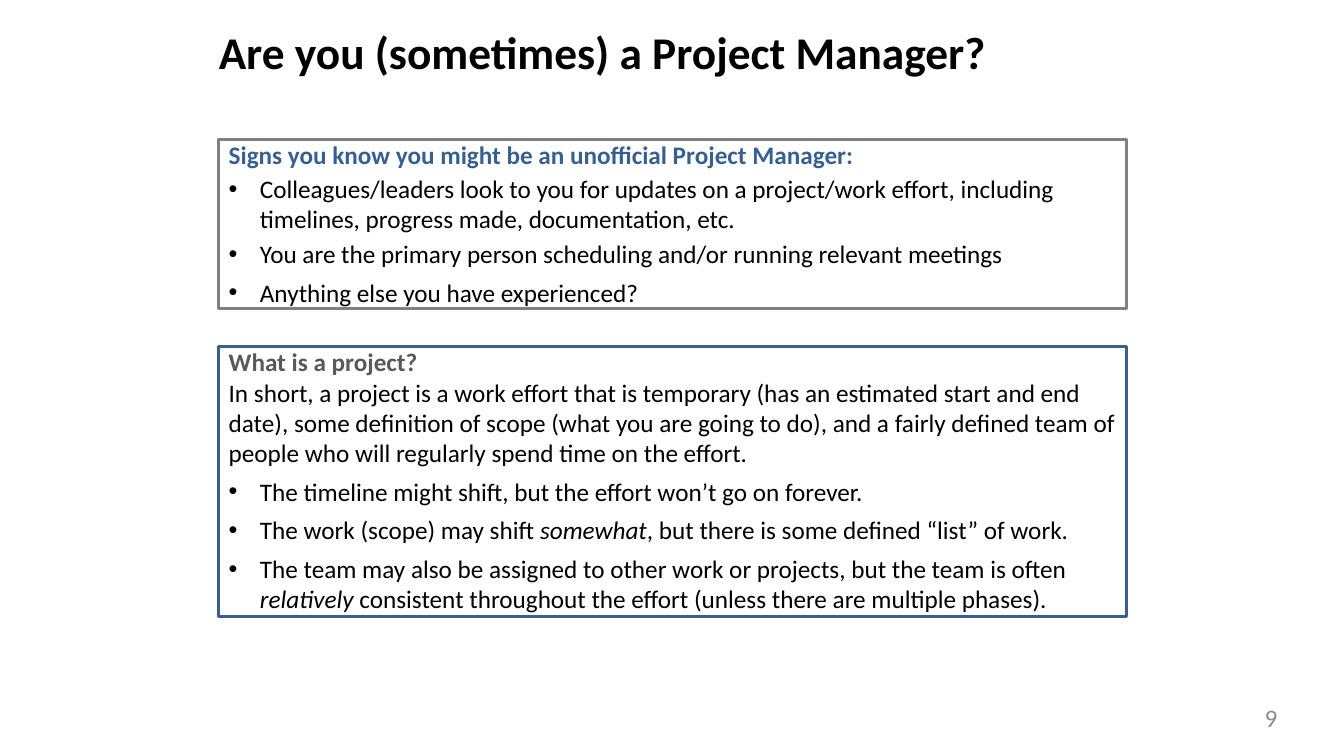
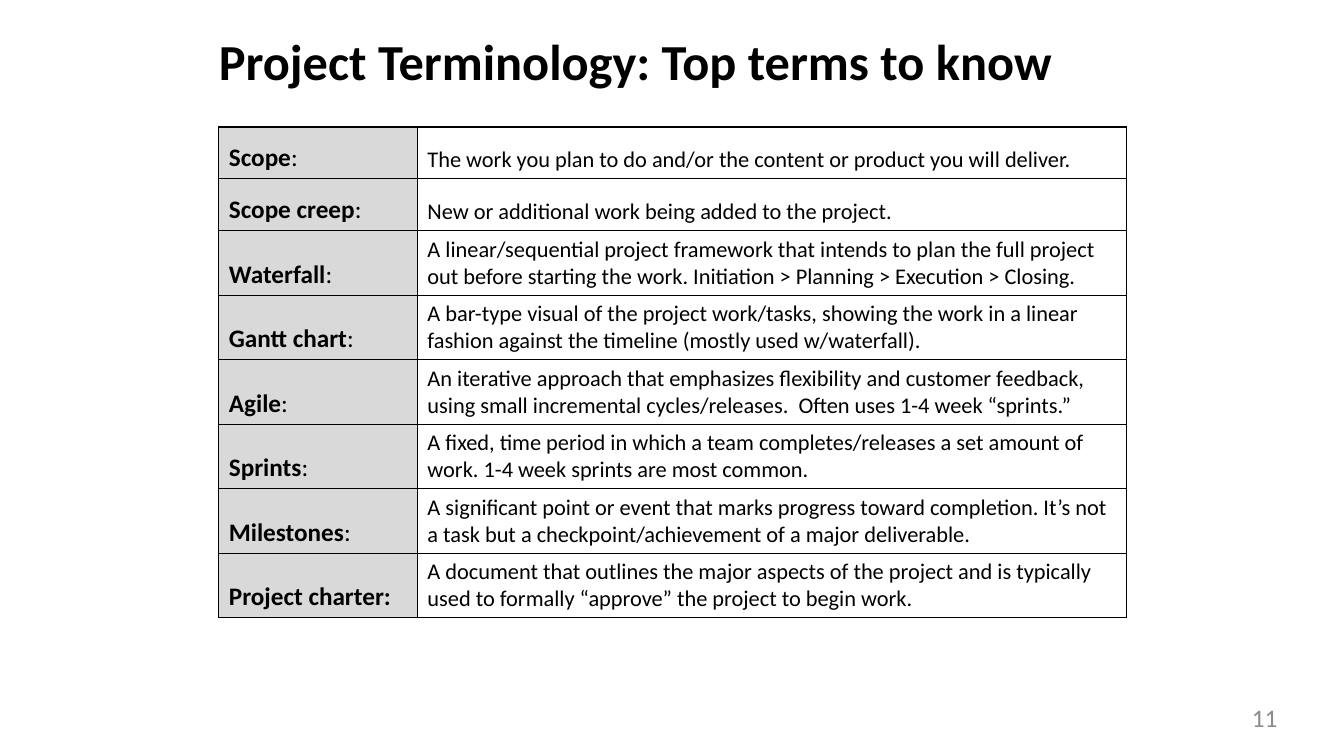
from dataclasses import dataclass

from lxml import etree
from pptx import Presentation
from pptx.dml.color import RGBColor
from pptx.enum import shapes, text
from pptx.oxml import ns
from pptx.util import Inches, Pt

BLACK = RGBColor(0x00, 0x00, 0x00)
BLUE = RGBColor(0x37, 0x60, 0x92)
GRAY = RGBColor(0x80, 0x80, 0x80)
DARK = RGBColor(0x59, 0x59, 0x59)
PALE = RGBColor(0x8C, 0x8C, 0x8C)
SHADE = RGBColor(0xD9, 0xD9, 0xD9)
FONT = "Calibri"
LEFT = 2.17
WIDTH = 9
INDENT = 0.31


@dataclass
class Run:
    text: str
    bold: bool = False
    italic: bool = False


@dataclass
class Para:
    runs: list[Run]
    color: RGBColor = BLACK
    bullet: bool = False
    after: float = 0


@dataclass
class Panel:
    top: float
    height: float
    line: RGBColor
    paras: list[Para]


@dataclass
class Term:
    name: str
    tail: str
    detail: str
    height: float = 0.64


def item(*runs: Run, after: float = 6) -> Para:
    return Para(list(runs), bullet=True, after=after)


PANELS = [
    Panel(1.38, 1.68, GRAY, [
        Para([Run("Signs you know you might be an unofficial Project Manager:", True)], BLUE, after=3),
        item(Run("Colleagues/leaders look to you for updates on a project/work effort, including "
                 "timelines, progress made, documentation, etc."), after=3),
        item(Run("You are the primary person scheduling and/or running relevant meetings")),
        item(Run("Anything else you have experienced?")),
    ]),
    Panel(3.44, 2.68, BLUE, [
        Para([Run("What is a project?", True)], DARK),
        Para([Run("In short, a project is a work effort that is temporary (has an estimated start and "
                  "end date), some definition of scope (what you are going to do), and a fairly "
                  "defined team of people who will regularly spend time on the effort.")], after=6),
        item(Run("The timeline might shift, but the effort won’t go on forever.")),
        item(Run("The work (scope) may shift "), Run("somewhat", italic=True),
             Run(", but there is some defined “list” of work.")),
        item(Run("The team may also be assigned to other work or projects, but the team is often "),
             Run("relatively", italic=True),
             Run(" consistent throughout the effort (unless there are multiple phases).")),
    ]),
]

TERMS = [
    Term("Scope", ":", "The work you plan to do and/or the content or product you will deliver.", 0.51),
    Term("Scope creep", ":", "New or additional work being added to the project.", 0.52),
    Term("Waterfall", ":", "A linear/sequential project framework that intends to plan the full project "
         "out before starting the work. Initiation > Planning > Execution > Closing."),
    Term("Gantt chart", ":", "A bar-type visual of the project work/tasks, showing the work in a linear "
         "fashion against the timeline (mostly used w/waterfall)."),
    Term("Agile", ":", "An iterative approach that emphasizes flexibility and customer feedback, "
         "using small incremental cycles/releases.  Often uses 1-4 week “sprints.”"),
    Term("Sprints", ":", "A fixed, time period in which a team completes/releases a set amount of "
         "work. 1-4 week sprints are most common."),
    Term("Milestones", ":", "A significant point or event that marks progress toward completion. It’s not "
         "a task but a checkpoint/achievement of a major deliverable."),
    Term("Project charter:", "", "A document that outlines the major aspects of the project and is typically "
         "used to formally “approve” the project to begin work."),
]


def write(frame, paras: list[Para], *, size: float = 18, align=text.PP_ALIGN.LEFT,
          space: float | None = None) -> None:
    frame.word_wrap = True
    for num, para in enumerate(paras):
        line = frame.paragraphs[0] if num == 0 else frame.add_paragraph()
        if para.bullet:
            props = line._p.get_or_add_pPr()
            props.set("marL", str(Inches(INDENT)))
            props.set("indent", str(-Inches(INDENT)))
            etree.SubElement(props, ns.qn("a:buFont"), typeface="Arial")
            etree.SubElement(props, ns.qn("a:buChar"), char="•")
        line.alignment = align
        line.space_after = Pt(para.after)
        if space:
            line.line_spacing = space
        for part in para.runs:
            run = line.add_run()
            run.text = part.text
            font = run.font
            font.name = FONT
            font.size = Pt(size)
            font.bold = part.bold
            font.italic = part.italic
            font.color.rgb = para.color


def pad(frame, side: float = 0) -> None:
    frame.margin_left = frame.margin_right = Inches(side)
    frame.margin_top = frame.margin_bottom = 0
    frame.vertical_anchor = text.MSO_ANCHOR.TOP


def label(slide, words: Para, left: float, top: float, width: float, height: float, **style) -> None:
    box = slide.shapes.add_textbox(Inches(left), Inches(top), Inches(width), Inches(height))
    pad(box.text_frame)
    write(box.text_frame, [words], **style)


def start(deck, title: str, page: int, size: float, space: float | None = None):
    slide = deck.slides.add_slide(deck.slide_layouts[6])
    label(slide, Para([Run(title, True)]), LEFT, 0.3, WIDTH, 0.51, size=size, space=space)
    label(slide, Para([Run(str(page))], PALE), 9.6, 6.97, 3.07, 0.3, align=text.PP_ALIGN.RIGHT)
    return slide


def draw(slide, panel: Panel) -> None:
    box = slide.shapes.add_shape(shapes.MSO_SHAPE.RECTANGLE, Inches(LEFT), Inches(panel.top),
                                 Inches(WIDTH), Inches(panel.height))
    box.shadow.inherit = False
    box.fill.background()
    box.line.color.rgb = panel.line
    box.line.width = Pt(2.25)
    pad(box.text_frame, 0.1)
    write(box.text_frame, panel.paras)
    box.text_frame.auto_size = text.MSO_AUTO_SIZE.SHAPE_TO_FIT_TEXT


def edge(cell) -> None:
    props = cell._tc.get_or_add_tcPr()
    for side in ("lnL", "lnR", "lnT", "lnB"):
        line = etree.SubElement(props, ns.qn(f"a:{side}"), w=str(Pt(1)))
        fill = etree.SubElement(line, ns.qn("a:solidFill"))
        etree.SubElement(fill, ns.qn("a:srgbClr"), val=str(BLACK))


def grid(slide, terms: list[Term]) -> None:
    total = sum(term.height for term in terms)
    table = slide.shapes.add_table(len(terms), 2, Inches(LEFT), Inches(1.26),
                                   Inches(WIDTH), Inches(total)).table
    table.first_row = table.horz_banding = False
    for col, width in zip(table.columns, (1.97, 7.03)):
        col.width = Inches(width)
    for row, term in zip(table.rows, terms):
        row.height = Inches(term.height)
        name, detail = row.cells
        for cell in (name, detail):
            edge(cell)
            cell.vertical_anchor = text.MSO_ANCHOR.BOTTOM
        name.fill.solid()
        name.fill.fore_color.rgb = SHADE
        detail.fill.background()
        runs = [Run(term.name, True)] + ([Run(term.tail)] if term.tail else [])
        write(name.text_frame, [Para(runs)])
        write(detail.text_frame, [Para([Run(term.detail)])], size=16)


def main() -> None:
    deck = Presentation()
    deck.slide_width = Inches(13.33)
    deck.slide_height = Inches(7.5)
    signs = start(deck, "Are you (sometimes) a Project Manager?", 9, 32.4, 0.9)
    for panel in PANELS:
        draw(signs, panel)
    terms = start(deck, "Project Terminology: Top terms to know", 11, 36)
    grid(terms, TERMS)
    deck.save("out.pptx")


if __name__ == "__main__":
    main()
